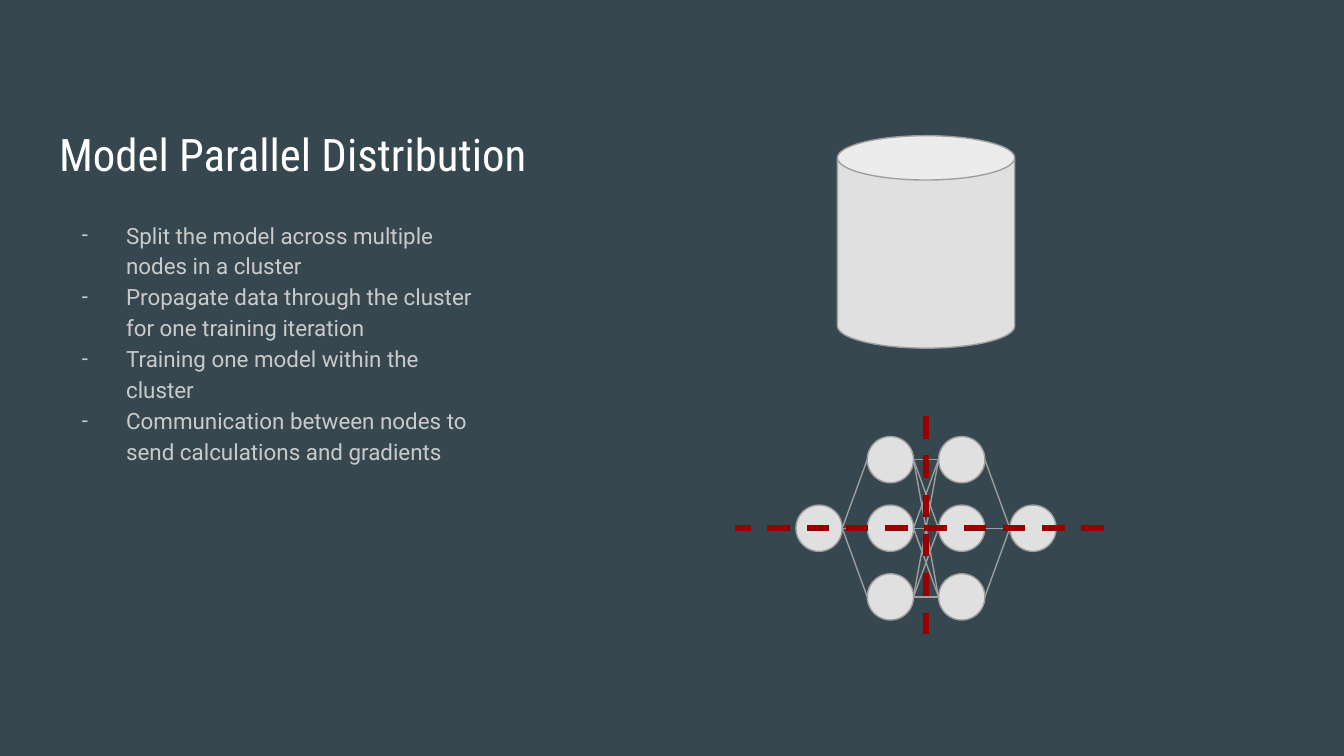
from itertools import product

from lxml import etree
from pptx import Presentation
from pptx.dml.color import RGBColor
from pptx.enum import dml, shapes, text
from pptx.oxml.ns import qn
from pptx.util import Pt

TITLE = "Model Parallel Distribution"
POINTS = [
    "Split the model across multiple nodes in a cluster",
    "Propagate data through the cluster for one training iteration",
    "Training one model within the cluster",
    "Communication between nodes to send calculations and gradients",
]
LAYERS = [1, 3, 3, 1]  # nodes per network layer

BACKGROUND = RGBColor(0x37, 0x47, 0x4F)
WHITE = RGBColor(0xFF, 0xFF, 0xFF)
BODY_GREY = RGBColor(0xCA, 0xCA, 0xCA)
FILL_GREY = RGBColor(0xE0, 0xE0, 0xE0)
LINE_GREY = RGBColor(0x9E, 0x9E, 0x9E)
SPLIT_RED = RGBColor(0x98, 0x00, 0x00)

CENTER_X, CENTER_Y = 496.1, 283  # middle of the network
NODE = 24.8
LAYER_GAP, NODE_GAP = 38.2, 36.75
INDENT, HANG = 36, 23.75


def place(sp, x, y, w, h):
    sp.left, sp.top, sp.width, sp.height = Pt(x), Pt(y), Pt(w), Pt(h)


def set_frame(tf, anchor):
    tf.word_wrap = True
    tf.auto_size = text.MSO_AUTO_SIZE.NONE
    tf.vertical_anchor = anchor
    tf.margin_left = tf.margin_right = tf.margin_top = tf.margin_bottom = Pt(7.2)


def write(p, words, *, font, size, color, spacing=1.0):
    p.alignment = text.PP_ALIGN.LEFT
    p.line_spacing = spacing
    p.space_before = p.space_after = Pt(0)
    r = p.add_run()
    r.text = words
    r.font.name, r.font.size = font, Pt(size)
    r.font.color.rgb = color


def add_bullet(p, char):
    pPr = p._p.get_or_add_pPr()
    pPr.set("marL", str(Pt(INDENT)))
    pPr.set("indent", str(-Pt(HANG)))
    color = etree.SubElement(pPr, qn("a:buClr"))
    etree.SubElement(color, qn("a:srgbClr"), val=str(BODY_GREY))
    etree.SubElement(pPr, qn("a:buFont"), typeface="Roboto")
    etree.SubElement(pPr, qn("a:buChar"), char=char)


def add_solid(parent, kind, x, y, w, h):
    sp = parent.add_shape(kind, Pt(x), Pt(y), Pt(w), Pt(h))
    sp.shadow.inherit = False
    sp.fill.solid()
    sp.fill.fore_color.rgb = FILL_GREY
    sp.line.color.rgb = LINE_GREY
    sp.line.width = Pt(0.75)


def add_line(parent, start, end, color, width, dash=None):
    ends = [Pt(v) for v in (*start, *end)]
    line = parent.add_connector(shapes.MSO_CONNECTOR.STRAIGHT, *ends)
    line.line.color.rgb = color
    line.line.width = Pt(width)
    if dash:
        line.line.dash_style = dash
    etree.SubElement(line._element.spPr, qn("a:effectLst"))


def add_network(s):
    network = s.shapes.add_group_shape().shapes
    layers = [
        [(CENTER_X + (i - (len(LAYERS) - 1) / 2) * LAYER_GAP,
          CENTER_Y + (j - (count - 1) / 2) * NODE_GAP) for j in range(count)]
        for i, count in enumerate(LAYERS)
    ]
    radius = NODE / 2
    for x, y in sum(layers, []):
        add_solid(network, shapes.MSO_SHAPE.OVAL, x - radius, y - radius, NODE, NODE)
    for left, right in zip(layers, layers[1:]):
        for (x1, y1), (x2, y2) in product(left, right):
            add_line(network, (x1 + radius, y1), (x2 - radius, y2), LINE_GREY, 0.75)


def main():
    prs = Presentation()
    prs.slide_width, prs.slide_height = Pt(720), Pt(405)
    s = prs.slides.add_slide(prs.slide_layouts[5])
    s.background.fill.solid()
    s.background.fill.fore_color.rgb = BACKGROUND

    title = s.shapes.title
    place(title, 24.5, 43.9, 270, 59.8)
    set_frame(title.text_frame, text.MSO_ANCHOR.BOTTOM)
    write(title.text_frame.paragraphs[0], TITLE,
          font="Roboto Condensed", size=24, color=WHITE)

    body = s.shapes.add_textbox(Pt(24.5), Pt(109.4), Pt(244.8), Pt(250.6))
    tf = body.text_frame
    set_frame(tf, text.MSO_ANCHOR.TOP)
    for i, point in enumerate(POINTS):
        p = tf.add_paragraph() if i else tf.paragraphs[0]
        write(p, point, font="Roboto", size=12, color=BODY_GREY, spacing=1.15)
        add_bullet(p, "-")

    add_solid(s.shapes, shapes.MSO_SHAPE.CAN, 448.6, 72.7, 95, 113.8)
    add_network(s)
    dash = dml.MSO_LINE.DASH
    add_line(s.shapes, (CENTER_X, 223), (CENTER_X, 339.4), SPLIT_RED, 3, dash)
    add_line(s.shapes, (591.4, CENTER_Y), (394, CENTER_Y), SPLIT_RED, 3, dash)

    prs.save("out.pptx")


if __name__ == "__main__":
    main()
